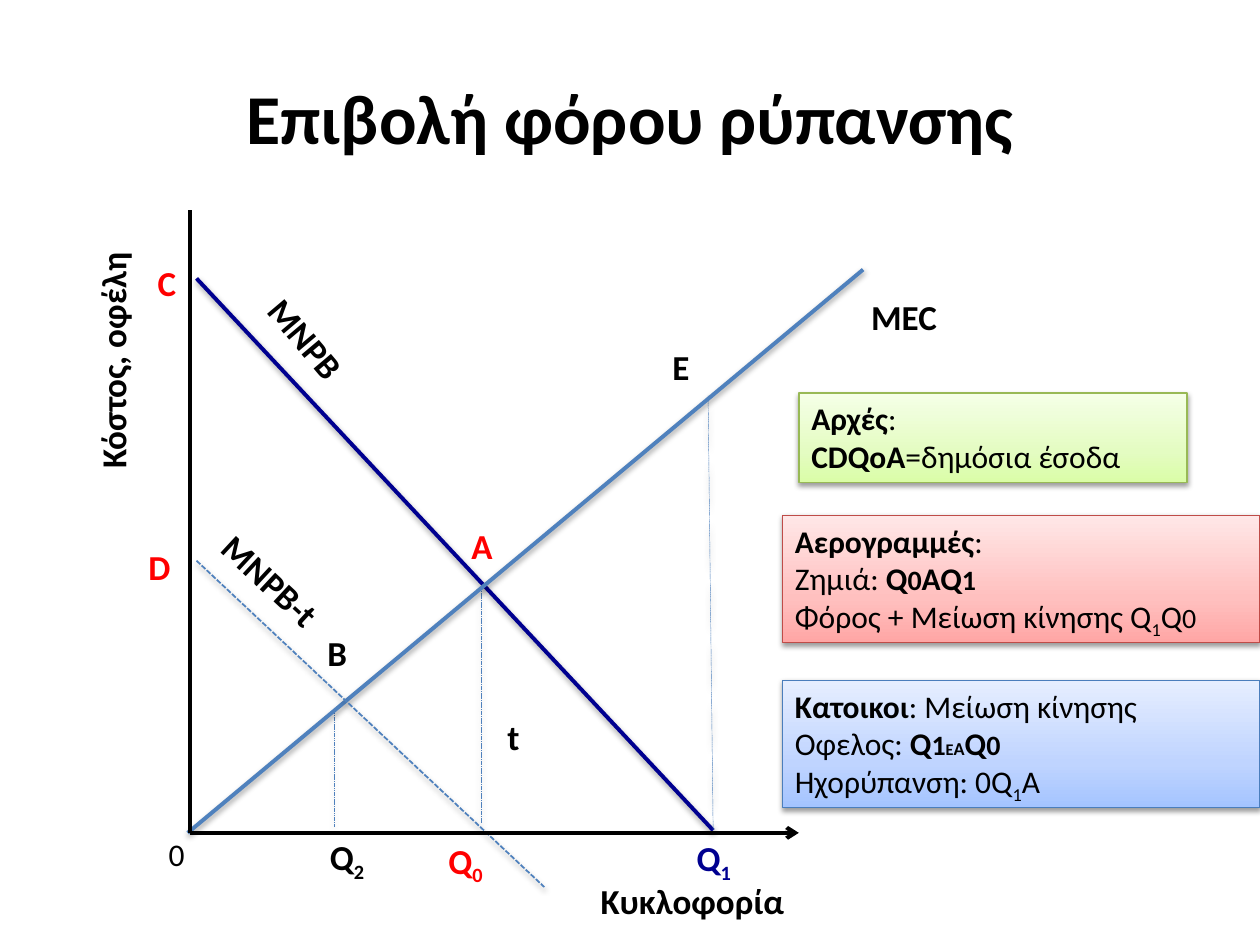
from copy import deepcopy

from lxml import etree
from pptx import Presentation
from pptx.dml.color import RGBColor
from pptx.enum.dml import MSO_LINE
from pptx.enum.shapes import MSO_CONNECTOR, MSO_SHAPE
from pptx.enum.text import MSO_ANCHOR, MSO_AUTO_SIZE, PP_ALIGN
from pptx.oxml import parse_xml
from pptx.oxml.ns import nsdecls, qn
from pptx.util import Inches, Pt

STRAIGHT = MSO_CONNECTOR.STRAIGHT
RECTANGLE = MSO_SHAPE.RECTANGLE
DASH = MSO_LINE.SQUARE_DOT
TOP, MIDDLE = MSO_ANCHOR.TOP, MSO_ANCHOR.MIDDLE
LEFT, CENTER = PP_ALIGN.LEFT, PP_ALIGN.CENTER
FIT = MSO_AUTO_SIZE.SHAPE_TO_FIT_TEXT

BLACK, RED, NAVY, BLUE = "000000", "FF0000", "000090", "4F81BD"
ORIGIN_X, ORIGIN_Y = 1.51, 6.61
LABEL_HEIGHT = 0.44

# Run formats
PLAIN = {"bold": False}
BOLD = {"bold": True}
SMALL = {"size": Pt(16)}
SMALL_BOLD = {"size": Pt(16), "bold": True}
SUBSCRIPT = -25
SHADOW = (
    f'<a:effectLst {nsdecls("a")}><a:outerShdw blurRad="40000" dist="20000" '
    'dir="5400000" rotWithShape="0"><a:srgbClr val="000000">'
    '<a:alpha val="38000"/></a:srgbClr></a:outerShdw></a:effectLst>'
)


def colour(value):
    return RGBColor.from_string(value)


class DiagramSlide:
    """Holds the text style and the current slide."""

    font = "Calibri"

    def __init__(self, page):
        self.page = page

    def add_spans(self, para, spans, size, text_colour=BLACK, align=LEFT):
        """Each span is (text, format) or (text, format, baseline percent)."""
        para.alignment = align
        for text, style, *baseline in spans:
            span = para.add_run()
            span.text = text
            values = {"name": self.font, "size": Pt(size), **style}
            for name, value in values.items():
                setattr(span.font, name, value)
            span.font.color.rgb = colour(text_colour)
            if baseline:
                span.font._element.set("baseline", str(baseline[0] * 1000))

    def title(self, text):
        box = self.page.shapes.title
        box.left, box.top = Inches(0.5), Inches(0.3)
        box.width, box.height = Inches(9), Inches(1.25)
        box.text_frame.vertical_anchor = MIDDLE
        self.add_spans(box.text_frame.paragraphs[0], [(text, BOLD)], 40, align=CENTER)

    def line(self, start, end, line_colour, width, dashed=False, shadow=True, arrow=False):
        line = self.page.shapes.add_connector(STRAIGHT, *map(Inches, start + end))
        line.line.color.rgb = colour(line_colour)
        line.line.width = Pt(width)
        if dashed:
            line.line.dash_style = DASH
        properties = line._element.spPr
        if arrow:
            etree.SubElement(properties.find(qn("a:ln")), qn("a:tailEnd"), type="arrow")
        if shadow:
            properties.append(parse_xml(SHADOW))
        else:
            etree.SubElement(properties, qn("a:effectLst"))

    def label(self, spans, left, top, width, text_colour=BLACK, rotation=0,
              size=20, height=LABEL_HEIGHT, align=CENTER, wrap=True):
        box = self.page.shapes.add_textbox(*map(Inches, (left, top, width, height)))
        box.rotation = rotation
        frame = box.text_frame
        frame.word_wrap = wrap
        frame.auto_size = FIT
        self.add_spans(frame.paragraphs[0], spans, size, text_colour, align)

    def note(self, left, top, width, height, stops, border, paragraphs):
        box = self.page.shapes.add_shape(RECTANGLE, *map(Inches, (left, top, width, height)))
        # Three gradient stops, running upwards
        box.fill.gradient()
        box.fill.gradient_angle = 90
        first_stop = box._element.spPr.find(".//" + qn("a:gs"))
        first_stop.addnext(deepcopy(first_stop))
        for stop, position, value in zip(box.fill.gradient_stops, (0, 0.35, 1), stops):
            stop.position = position
            stop.color.rgb = colour(value)
        box.line.color.rgb = colour(border)
        box.line.width = Pt(0.75)
        box._element.spPr.append(parse_xml(SHADOW))
        # Text
        frame = box.text_frame
        frame.word_wrap = True
        frame.auto_size = FIT
        frame.vertical_anchor = TOP
        for number, spans in enumerate(paragraphs):
            para = frame.add_paragraph() if number else frame.paragraphs[0]
            self.add_spans(para, spans, 18)


def build():
    deck = Presentation()
    deck.slide_width, deck.slide_height = Inches(10), Inches(7.5)
    slide = DiagramSlide(deck.slides.add_slide(deck.slide_layouts[5]))
    slide.title("Επιβολή φόρου ρύπανσης")

    # Benefit and cost curves, the taxed curve and the drop lines
    slide.line((1.56, 2.21), (5.66, 6.59), NAVY, 2.25)
    for start, end in (
        ((5.62, 3.14), (5.66, 6.59)),
        ((3.82, 4.69), (3.82, 6.53)),
        ((2.65, 5.63), (2.65, 6.56)),
    ):
        slide.line(start, end, BLUE, 0.25, dashed=True)
    slide.line((6.85, 2.14), (1.49, ORIGIN_Y), BLUE, 2.25)
    slide.line((1.56, 4.45), (4.32, 7.04), BLUE, 1, dashed=True)

    # Axes
    slide.line((ORIGIN_X, 1.67), (ORIGIN_X, ORIGIN_Y), BLACK, 2.25, shadow=False)
    slide.line((ORIGIN_X, ORIGIN_Y), (6.34, ORIGIN_Y), BLACK, 2.25, shadow=False, arrow=True)

    # Axis, curve and point names
    for text, *place in (
        ("Κόστος, οφέλη", -0.3, 2.64, 2.39, BLACK, 270),
        ("Κυκλοφορία", 4.24, 6.93, 2.51),
        ("MNPB", 1.84, 2.47, 1.17, BLACK, 49.9),
        ("MNPB-t", 1.56, 4.39, 1.17, BLACK, 42.8),
        ("MEC", 6.67, 2.3, 1.01),
        ("C", 1.13, 2.03, 0.39, RED),
        ("E", 5.15, 2.69, 0.51),
        ("A", 3.57, 4.11, 0.51, RED),
        ("D", 1.01, 4.28, 0.51, RED),
        ("B", 2.42, 4.96, 0.51),
        ("t", 3.91, 5.63, 0.33),
    ):
        slide.label([(text, BOLD)], *place)

    # Quantities on the horizontal axis
    for index, *place in (
        ("0", 3.43, 6.61, 0.53, RED),
        ("1", 5.41, 6.59, 0.51, NAVY),
        ("2", 2.42, 6.58, 0.67),
    ):
        slide.label([("Q", BOLD), (index, BOLD, SUBSCRIPT)], *place)
    slide.label([("0", PLAIN)], 1.24, 6.58, 0.33, size=18, height=0.4, align=LEFT, wrap=False)

    # Notes on who gains and who loses
    slide.note(6.34, 3.12, 3.08, 0.71, ("DAFDA7", "E4FCC2", "F5FFE7"), "98B955", [
        [("Αρχές", BOLD), (":", PLAIN)],
        [("CDQoA", BOLD), ("=δημόσια έσοδα", PLAIN)],
    ])
    slide.note(6.21, 4.09, 3.79, 1.01, ("FFA6A5", "FFC0BF", "FFE7E7"), "BF4C48", [
        [("Αερογραμμές", BOLD), (":", PLAIN)],
        [("Ζημιά: ", PLAIN), ("Q", BOLD), ("0", SMALL_BOLD), ("AQ", BOLD), ("1", SMALL_BOLD)],
        [("Φόρος + Μείωση κίνησης Q", PLAIN), ("1", PLAIN, SUBSCRIPT), ("Q", PLAIN), ("0", SMALL)],
    ])
    slide.note(6.21, 5.4, 3.79, 1.01, ("A4C4FF", "BFD4FF", "E6EEFF"), "4B7EBC", [
        [("Κατοικοι", BOLD), (": Μείωση κίνησης", PLAIN)],
        [("Οφελος: ", PLAIN), ("Q", BOLD), ("1", SMALL_BOLD), ("Ε", SMALL_BOLD, 1),
         ("A", BOLD, 1), ("Q", BOLD), ("0", SMALL_BOLD)],
        [("Ηχορύπανση: 0Q", PLAIN), ("1", PLAIN, SUBSCRIPT), ("Α", PLAIN)],
    ])

    deck.save("out.pptx")


if __name__ == "__main__":
    build()
